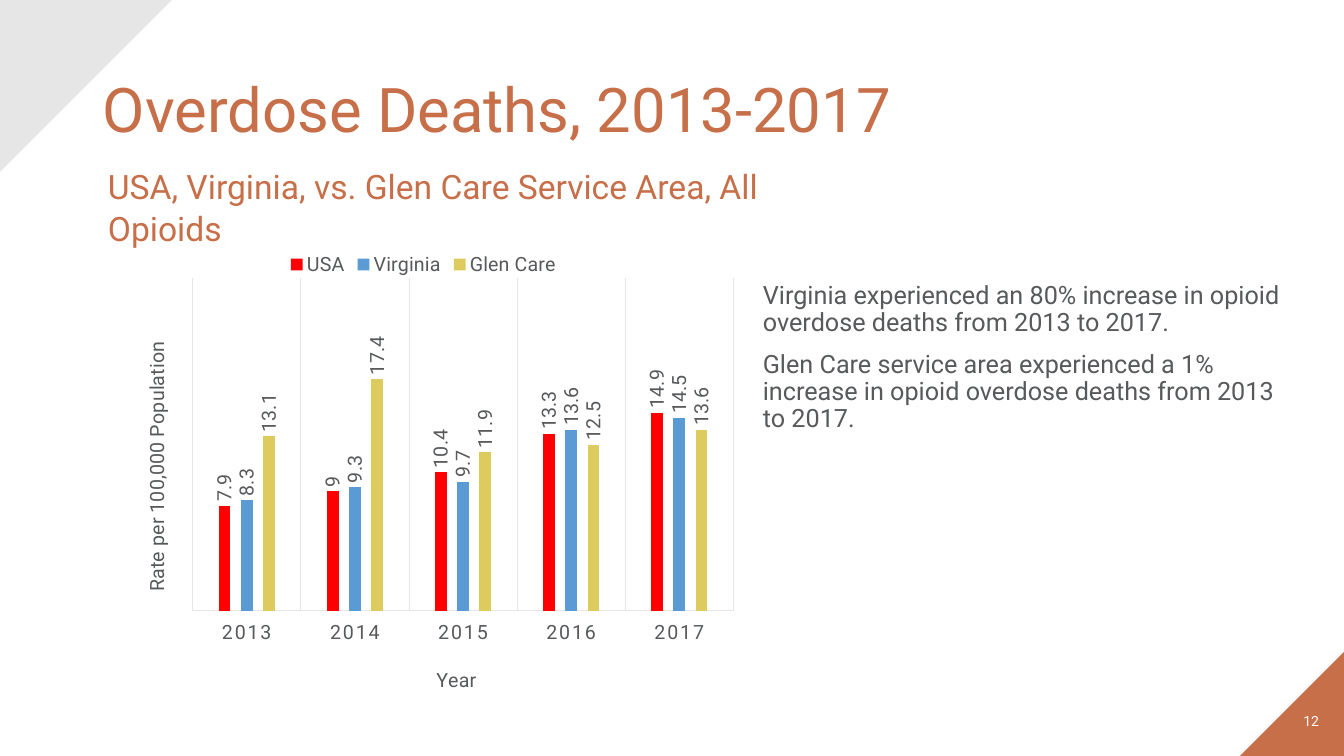
from dataclasses import dataclass

from lxml.etree import SubElement
from pptx import Presentation
from pptx.chart.data import CategoryChartData
from pptx.dml.color import RGBColor
from pptx.enum.chart import XL_CHART_TYPE as ChartType, XL_LABEL_POSITION as LabelPlace
from pptx.enum.chart import XL_LEGEND_POSITION as LegendPlace, XL_TICK_LABEL_POSITION as TickPlace
from pptx.enum.chart import XL_TICK_MARK as TickMark
from pptx.enum.shapes import MSO_SHAPE as Shape
from pptx.enum.text import MSO_ANCHOR as Anchor, PP_ALIGN as Align
from pptx.oxml.ns import qn
from pptx.util import Emu, Pt

# Content
TITLE = "Overdose Deaths, 2013-2017"
SUBTITLE = "USA, Virginia, vs. Glen Care Service Area, All Opioids"
FINDINGS = [
    "Virginia experienced an 80% increase in opioid overdose deaths from 2013 to 2017.",
    "Glen Care service area experienced a 1% increase in opioid overdose deaths from 2013 to 2017.",
]
PAGE_NUMBER = "12"
YEARS = ["2013", "2014", "2015", "2016", "2017"]
RATES = [
    ("USA", "FF0000", (7.9, 9, 10.4, 13.3, 14.9)),
    ("Virginia", "5B9BD5", (8.3, 9.3, 9.7, 13.6, 14.5)),
    ("Glen Care", "DDCC5D", (13.1, 17.4, 11.9, 12.5, 13.6)),
]
YEAR_TITLE = "Year"
RATE_TITLE = "Rate per 100,000 Population"


@dataclass(frozen=True)
class Theme:
    font: str = "Roboto"
    accent: str = "C66F49"
    corner: str = "E7E6E6"
    ink: str = "57595B"
    grid: str = "E6E6E7"
    white: str = "FFFFFF"
    title: int = 44
    subtitle: int = 24
    body: int = 18
    chart: int = 14
    number: int = 10


THEME = Theme()

# Geometry in px: left, top, width, height
PAGE = (1344, 756)
TITLE_BOX = (93, 40, 1159, 146)
SUBTITLE_BOX = (93, 190, 789, 33)
FINDINGS_BOX = (753, 278, 541, 334)
NUMBER_BOX = (1252, 701, 77, 40)
CHART_BOX = (93, 241, 661, 475)
PLOT_BOX = (193, 278, 541, 333)
YEAR_TITLE_AT = (433, 663)
RATE_TITLE_AT = (139, 338)
CORNERS = [
    ((1240, 652, 104, 104), 270, THEME.accent),
    ((0, 0, 172, 172), 90, THEME.corner),
]


def px(length):
    return Emu(round(length * 914400 / 100.8))


def color(code):
    return RGBColor.from_string(code)


def style(font, size, code=THEME.ink):
    font.name, font.size, font.bold = THEME.font, Pt(size), False
    font.color.rgb = color(code)


def add_text(page, place, lines, size, code, anchor=Anchor.TOP, align=Align.LEFT,
             leading=None, before=0, inset=None):
    frame = page.shapes.add_textbox(*map(px, place)).text_frame
    frame.word_wrap = True
    frame.vertical_anchor = anchor
    if inset is not None:
        frame.margin_left = frame.margin_right = px(inset)
        frame.margin_top = frame.margin_bottom = px(inset)
    for index, line in enumerate(lines):
        para = frame.add_paragraph() if index else frame.paragraphs[0]
        para.alignment = align
        para.line_spacing = leading
        para.space_before = Pt(before)
        span = para.add_run()
        span.text = line
        style(span.font, size, code)


def set_layout(layout, place, inner=False):
    """Fix a chart part at a px place, given as fractions of the chart."""
    left, top, width, height = CHART_BOX
    manual = SubElement(layout, qn("c:manualLayout"))
    entries = [("layoutTarget", "inner")] if inner else []
    entries += [("xMode", "edge"), ("yMode", "edge"),
                ("x", (place[0] - left) / width), ("y", (place[1] - top) / height)]
    if inner:
        entries += [("w", place[2] / width), ("h", place[3] / height)]
    for name, value in entries:
        text = value if isinstance(value, str) else f"{value:.3f}"
        SubElement(manual, qn("c:" + name)).set("val", text)


def add_axis_title(axis, text, place):
    title = axis.axis_title
    span = title.text_frame.paragraphs[0].add_run()
    span.text = text
    style(span.font, THEME.chart)
    element = title._element
    layout = element.find(qn("c:layout"))
    if layout is None:
        layout = element.makeelement(qn("c:layout"))
        element.find(qn("c:tx")).addnext(layout)
    set_layout(layout, place)
    return title


def turn_upright(body):
    body.set("rot", "-5400000")
    body.set("vert", "horz")


def add_rate_chart(page):
    data = CategoryChartData()
    data.categories = YEARS
    for name, _, values in RATES:
        data.add_series(name, values)
    chart = page.shapes.add_chart(ChartType.COLUMN_CLUSTERED, *map(px, CHART_BOX), data).chart
    style(chart.font, THEME.chart)
    chart.has_title = False

    # Legend
    chart.has_legend = True
    chart.legend.position = LegendPlace.TOP
    chart.legend.include_in_layout = False
    style(chart.legend.font, THEME.chart)

    # Columns and their values
    plot = chart.plots[0]
    plot.gap_width, plot.overlap, plot.vary_by_categories = 444, -90, False
    for series, (_, code, _) in zip(plot.series, RATES):
        series.format.fill.solid()
        series.format.fill.fore_color.rgb = color(code)
        labels = series.data_labels
        labels.show_value = True
        labels.position = LabelPlace.OUTSIDE_END
        style(labels.font, THEME.chart)
        turn_upright(labels._element.find(".//" + qn("a:bodyPr")))

    # Year axis
    years = chart.category_axis
    years.major_tick_mark = years.minor_tick_mark = TickMark.NONE
    years.tick_label_position = TickPlace.LOW
    years.has_major_gridlines = True
    for line in (years.format.line, years.major_gridlines.format.line):
        line.color.rgb = color(THEME.grid)
        line.width = Pt(0.75)
    style(years.tick_labels.font, THEME.chart)
    years._element.find(qn("c:txPr")).find(".//" + qn("a:defRPr")).set("spc", "120")
    add_axis_title(years, YEAR_TITLE, YEAR_TITLE_AT)

    # Rate axis, hidden but for its title
    rates = chart.value_axis
    rates.minimum_scale, rates.maximum_scale = 0, 25
    rates.has_major_gridlines = False
    rates.visible = False
    title = add_axis_title(rates, RATE_TITLE, RATE_TITLE_AT)
    turn_upright(title._element.find(".//" + qn("a:bodyPr")))

    # Plot area
    area = chart._chartSpace.find(".//" + qn("c:plotArea"))
    layout = area.find(qn("c:layout"))
    if layout is None:
        layout = area.makeelement(qn("c:layout"))
        area.insert(0, layout)
    set_layout(layout, PLOT_BOX, inner=True)


def main():
    deck = Presentation()
    deck.slide_width, deck.slide_height = map(px, PAGE)
    page = deck.slides.add_slide(deck.slide_layouts[6])

    # Corner triangles
    for place, turn, code in CORNERS:
        corner = page.shapes.add_shape(Shape.RIGHT_TRIANGLE, *map(px, place))
        corner.rotation = turn
        corner.shadow.inherit = False
        corner.fill.solid()
        corner.fill.fore_color.rgb = color(code)
        corner.line.fill.background()

    # Text and chart
    add_text(page, TITLE_BOX, [TITLE], THEME.title, THEME.accent, Anchor.MIDDLE, leading=0.9)
    add_text(page, NUMBER_BOX, [PAGE_NUMBER], THEME.number, THEME.white, Anchor.MIDDLE, Align.RIGHT)
    add_text(page, FINDINGS_BOX, FINDINGS, THEME.body, THEME.ink, leading=0.9, before=10)
    add_text(page, SUBTITLE_BOX, [SUBTITLE], THEME.subtitle, THEME.accent, Anchor.MIDDLE,
             leading=Pt(30), before=8, inset=15)
    add_rate_chart(page)
    deck.save("out.pptx")


if __name__ == "__main__":
    main()
